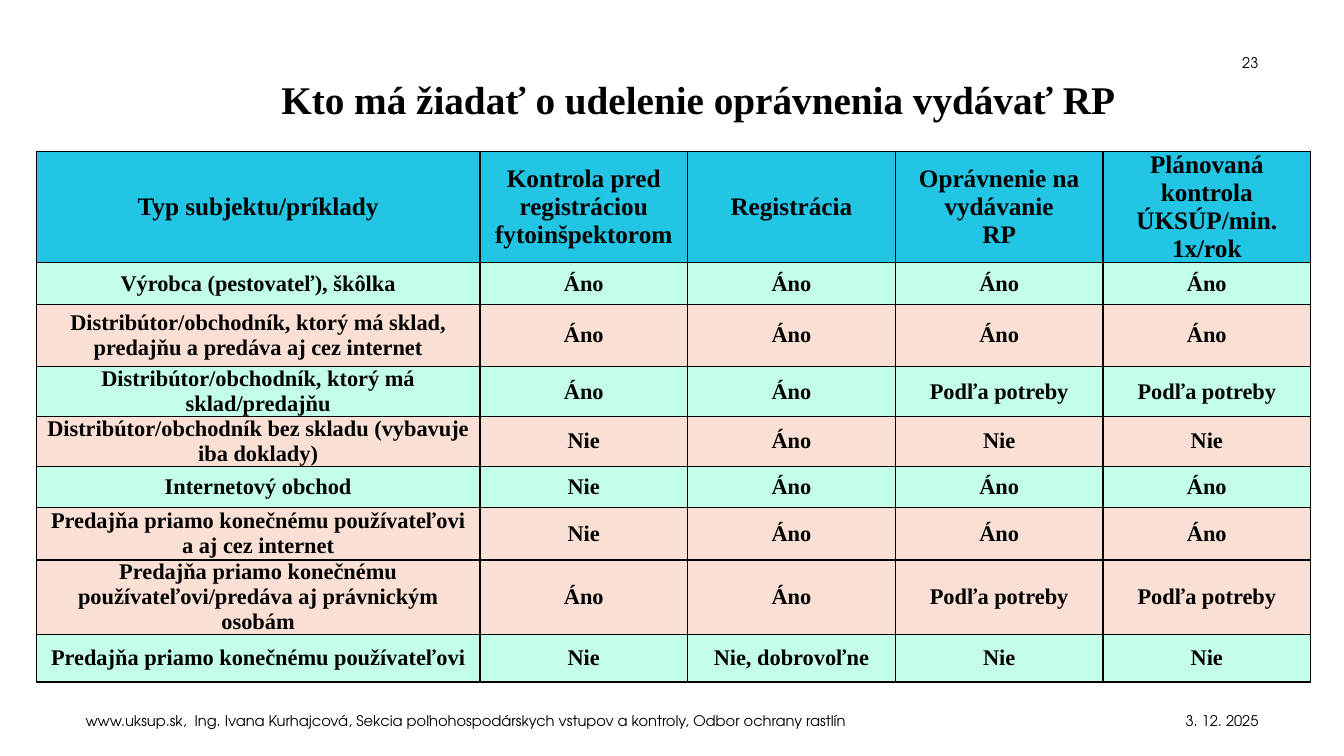
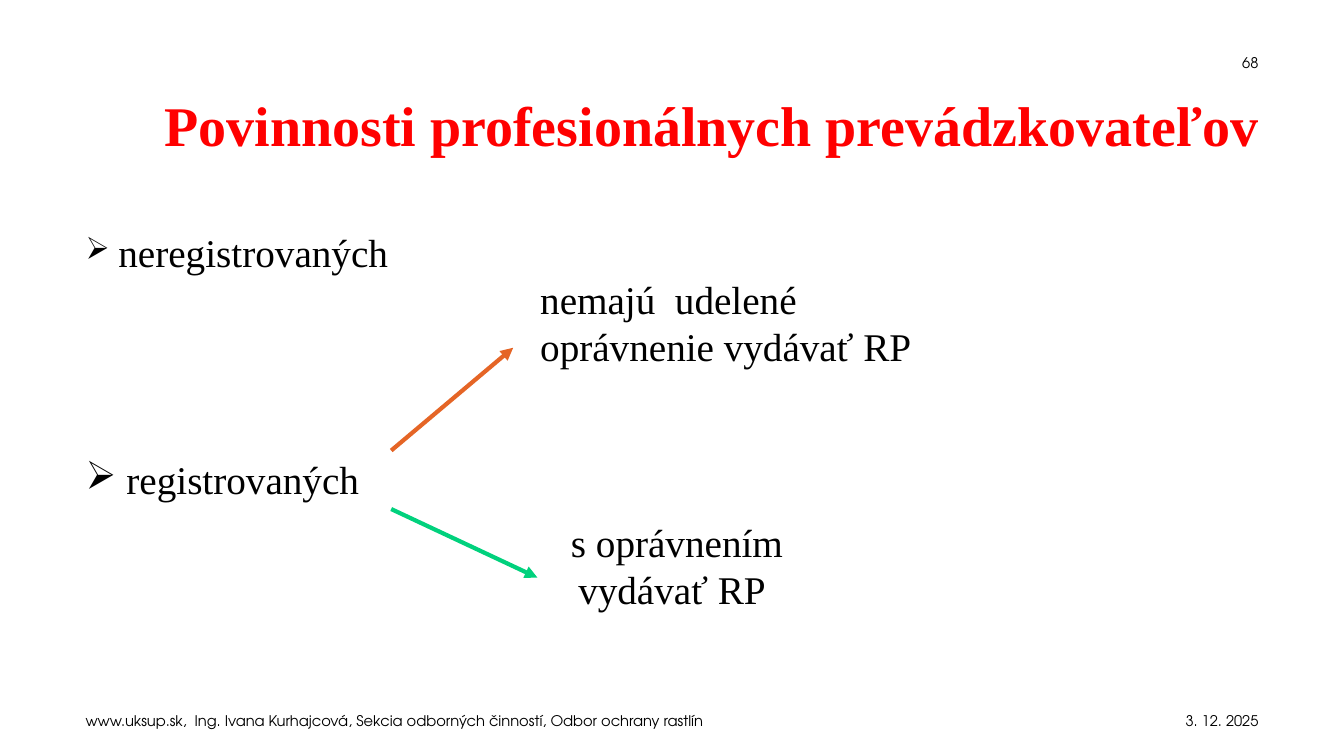
import pptx
import pptx.dml.color
import pptx.enum.shapes
import pptx.enum.text
import pptx.oxml
import pptx.oxml.ns
import pptx.util
from dataclasses import dataclass
from lxml import etree

ALIGN = pptx.enum.text.PP_ALIGN
ANCHOR = pptx.enum.text.MSO_ANCHOR
FIT = pptx.enum.text.MSO_AUTO_SIZE
TITLE_ONLY = 5


@dataclass(frozen=True)
class Theme:
    serif: str = "Times New Roman"
    sans: str = "TeX Gyre Adventor"
    ink: str = "000000"
    red: str = "FF0000"
    header: str = "23C5E5"
    mint: str = "C3FFE7"
    peach: str = "FAE0D4"
    orange: str = "E56526"
    green: str = "01D17D"
    small: float = 10.5
    cell: int = 16
    column_head: int = 18
    bullet: int = 22
    text: int = 28
    heading: int = 40


THEME = Theme()
PAGE = (1333, 750)
DATE = "3. 12. 2025"
AUTHOR = "www.uksup.sk,  Ing. Ivana Kurhajcová, "

COLUMNS = (440, 206, 206, 206, 206)
COLUMN_HEADS = ("Typ subjektu/príklady", "Kontrola pred registráciou fytoinšpektorom",
                "Registrácia", "Oprávnenie na vydávanie\nRP",
                "Plánovaná kontrola ÚKSÚP/min. 1x/rok")
HEAD_HEIGHT = 106
YES, NO, AS_NEEDED = "Áno", "Nie", "Podľa potreby"
# Height, fill, subject, then the four answers
SUBJECTS = (
    (41, THEME.mint, "Výrobca (pestovateľ), škôlka", YES, YES, YES, YES),
    (62, THEME.peach, "Distribútor/obchodník, ktorý má sklad, predajňu a predáva aj cez internet",
     YES, YES, YES, YES),
    (41, THEME.mint, "Distribútor/obchodník, ktorý má sklad/predajňu",
     YES, YES, AS_NEEDED, AS_NEEDED),
    (41, THEME.peach, "Distribútor/obchodník bez skladu (vybavuje iba doklady)",
     NO, YES, NO, NO),
    (41, THEME.mint, "Internetový obchod", NO, YES, YES, YES),
    (52, THEME.peach, "Predajňa priamo konečnému používateľovi a aj cez internet",
     NO, YES, YES, YES),
    (53, THEME.peach, "Predajňa priamo konečnému používateľovi/predáva aj právnickým osobám",
     YES, YES, AS_NEEDED, AS_NEEDED),
    (47, THEME.mint, "Predajňa priamo konečnému používateľovi",
     NO, "Nie, dobrovoľne", NO, NO),
)


def px(length):
    """100 px make one inch."""
    return pptx.util.Emu(length * 9144)


def rgb(color):
    return pptx.dml.color.RGBColor.from_string(color)


def style(run, size, color=THEME.ink, font=THEME.serif, bold=False):
    run.font.name = font
    run.font.size = pptx.util.Pt(size)
    run.font.bold = bold
    run.font.color.rgb = rgb(color)


def write(frame, text, size, align=ALIGN.LEFT, **look):
    frame.text = text
    for paragraph in frame.paragraphs:
        paragraph.alignment = align
        for run in paragraph.runs:
            style(run, size, **look)


def add_label(slide, box, text, size, align=ALIGN.LEFT, anchor=ANCHOR.TOP, fit=FIT.NONE, **look):
    frame = slide.shapes.add_textbox(*map(px, box)).text_frame
    frame.word_wrap = True
    frame.auto_size = fit
    frame.vertical_anchor = anchor
    write(frame, text, size, align, **look)
    return frame


def add_page(deck, number, department):
    """Add a slide with its number, date and footer."""
    slide = deck.slides.add_slide(deck.slide_layouts[TITLE_ONLY])
    for box, text, align in (((958, 42, 300, 40), number, ALIGN.RIGHT),
                             ((940, 695, 318, 40), DATE, ALIGN.RIGHT),
                             ((75, 695, 850, 40), AUTHOR + department, ALIGN.LEFT)):
        add_label(slide, box, text, THEME.small, align, ANCHOR.MIDDLE, font=THEME.sans)
    return slide


def set_title(slide, box, text, size, align, color):
    title = slide.shapes.title
    title.left, title.top, title.width, title.height = map(px, box)
    frame = title.text_frame
    frame.auto_size = FIT.NONE
    frame.vertical_anchor = ANCHOR.MIDDLE
    write(frame, text, size, align, color=color, bold=True)
    frame.paragraphs[0].line_spacing = 0.9


def fill_cell(cell, text, size, color):
    cell.margin_left = cell.margin_right = px(7)
    cell.margin_top = cell.margin_bottom = 0
    cell.vertical_anchor = ANCHOR.MIDDLE
    write(cell.text_frame, text, size, ALIGN.CENTER, bold=True)
    properties = cell._tc.get_or_add_tcPr()
    for side in ("lnL", "lnR", "lnT", "lnB"):
        properties.append(pptx.oxml.parse_xml(
            f'<a:{side} {pptx.oxml.ns.nsdecls("a")} w="12700"><a:solidFill>'
            f'<a:srgbClr val="{THEME.ink}"/></a:solidFill></a:{side}>'))
    cell.fill.solid()
    cell.fill.fore_color.rgb = rgb(color)


def add_subject_table(slide, left, top):
    rows = [(HEAD_HEIGHT, THEME.header, *COLUMN_HEADS), *SUBJECTS]
    box = (left, top, sum(COLUMNS), sum(row[0] for row in rows))
    table = slide.shapes.add_table(len(rows), len(COLUMNS), *map(px, box)).table
    for column, width in zip(table.columns, COLUMNS):
        column.width = px(width)
    for index, (height, color, *texts) in enumerate(rows):
        table.rows[index].height = px(height)
        size = THEME.cell if index else THEME.column_head
        for cell, text in zip(table.rows[index].cells, texts):
            fill_cell(cell, text, size, color)


def add_operator_list(slide, box):
    frame = add_label(slide, box, " \n registrovaných", THEME.text)
    unregistered, registered = frame.paragraphs
    for paragraph in frame.paragraphs:
        properties = paragraph._p.get_or_add_pPr()
        properties.set("marL", str(px(25)))
        properties.set("indent", str(-px(25)))
        etree.SubElement(properties, pptx.oxml.ns.qn("a:buChar"), char="➢")
        paragraph.line_spacing = 0.9
    # The small leading run sets the size of the first bullet
    unregistered.runs[0].font.size = pptx.util.Pt(THEME.bullet)
    name = unregistered.add_run()
    name.text = "neregistrovaných"
    style(name, THEME.text)
    registered.space_before = pptx.util.Pt(132)


def add_arrow(slide, start, end, color):
    arrow = slide.shapes.add_connector(
        pptx.enum.shapes.MSO_CONNECTOR.STRAIGHT, *map(px, start + end))
    arrow.line.color.rgb = rgb(color)
    arrow.line.width = pptx.util.Pt(3)
    etree.SubElement(arrow.line._get_or_add_ln(), pptx.oxml.ns.qn("a:tailEnd"), type="triangle")
    etree.SubElement(arrow._element.spPr, pptx.oxml.ns.qn("a:effectLst"))


def add_authorisation_slide(deck):
    slide = add_page(deck, "23", "Sekcia poľnohospodárskych vstupov a kontroly, "
                                 "Odbor ochrany rastlín")
    set_title(slide, (126, 66, 1133, 69), "Kto má žiadať o udelenie oprávnenia vydávať RP",
              THEME.text, ALIGN.CENTER, THEME.ink)
    add_subject_table(slide, 36, 150)


def add_duties_slide(deck):
    slide = add_page(deck, "68", "Sekcia odborných činností, Odbor ochrany rastlín")
    set_title(slide, (75, 57, 1183, 141), "Povinnosti profesionálnych prevádzkovateľov",
              THEME.heading, ALIGN.RIGHT, THEME.red)
    add_operator_list(slide, (75, 227, 1183, 440))
    add_arrow(slide, (388, 447), (509, 345), THEME.orange)
    add_arrow(slide, (388, 505), (533, 573), THEME.green)
    add_label(slide, (526, 268, 414, 104), "nemajú  udelené oprávnenie vydávať RP",
              THEME.text, fit=FIT.SHAPE_TO_FIT_TEXT)
    add_label(slide, (509, 509, 315, 104), " s oprávnením vydávať RP",
              THEME.text, ALIGN.CENTER, fit=FIT.SHAPE_TO_FIT_TEXT)


def main():
    deck = pptx.Presentation()
    deck.slide_width, deck.slide_height = map(px, PAGE)
    add_authorisation_slide(deck)
    add_duties_slide(deck)
    deck.save("out.pptx")


if __name__ == "__main__":
    main()
